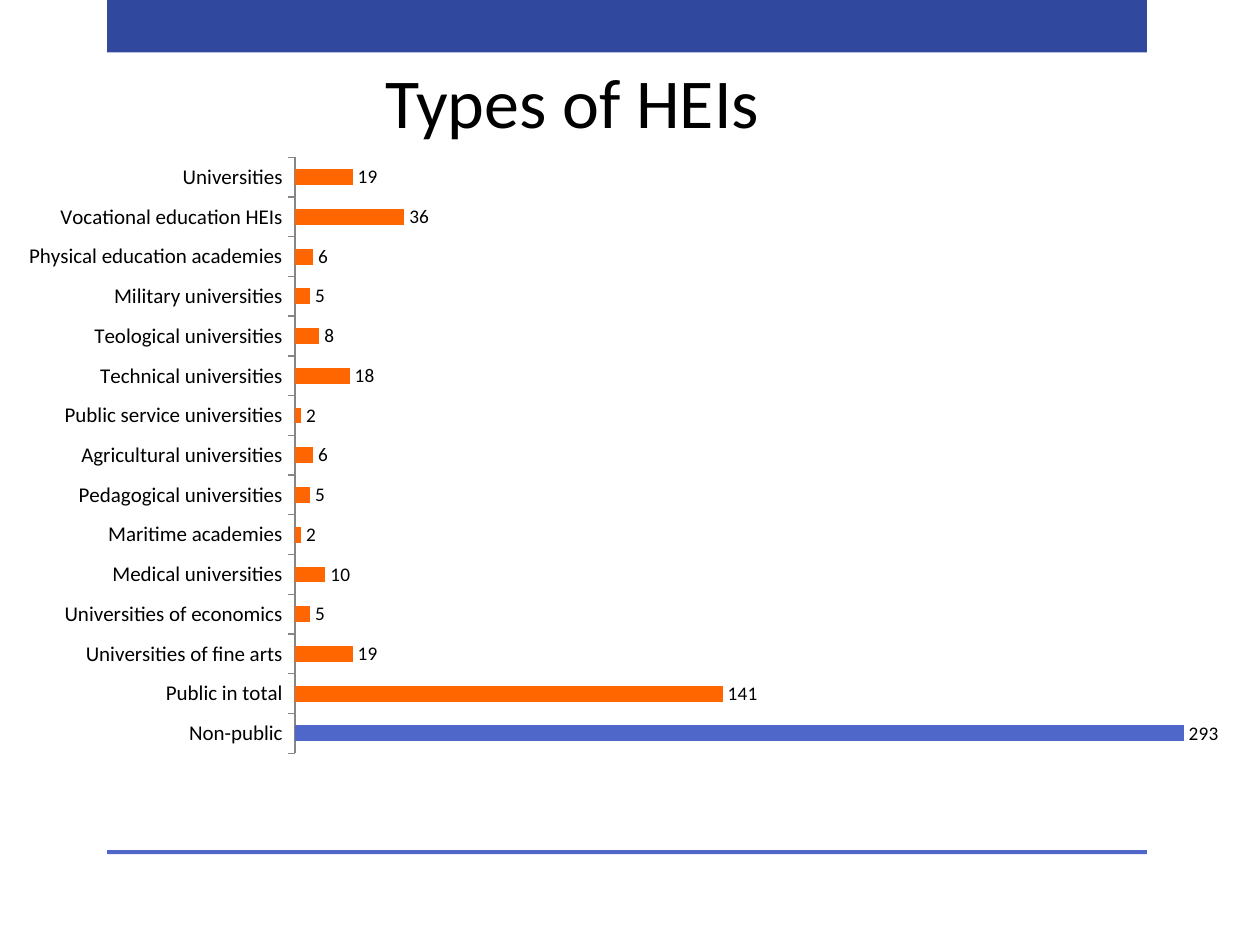
import pptx
import pptx.chart.data
import pptx.dml.color
import pptx.enum.chart
import pptx.enum.shapes
import pptx.enum.text
import pptx.oxml
import pptx.util

Cm = pptx.util.Cm
Pt = pptx.util.Pt
RGBColor = pptx.dml.color.RGBColor

NAVY = RGBColor(0x31, 0x48, 0x9F)
BLUE = RGBColor(0x4E, 0x67, 0xC8)
ORANGE = RGBColor(0xFF, 0x66, 0x00)
BLACK = RGBColor(0, 0, 0)
GREY = RGBColor(0x86, 0x86, 0x86)

INSTITUTIONS = {
    "Non-public": 293,
    "Public in total": 141,
    "Universities of fine arts": 19,
    "Universities of economics": 5,
    "Medical universities": 10,
    "Maritime academies": 2,
    "Pedagogical universities": 5,
    "Agricultural universities": 6,
    "Public service universities": 2,
    "Technical universities": 18,
    "Teological universities": 8,
    "Military universities": 5,
    "Physical education academies": 6,
    "Vocational education HEIs": 36,
    "Universities": 19,
}

PLOT_LAYOUT = (
    '<c:layout xmlns:c="http://schemas.openxmlformats.org/drawingml/2006/chart">'
    '<c:manualLayout><c:layoutTarget val="inner"/>'
    '<c:xMode val="edge"/><c:yMode val="edge"/>'
    '<c:x val="0.24"/><c:y val="0.02"/><c:w val="0.74"/><c:h val="0.96"/>'
    '</c:manualLayout></c:layout>'
)


class SlideBuilder:
    font_name = "Calibri"

    def __init__(self, slide):
        self.slide = slide

    def style_font(self, font, size):
        font.name = self.font_name
        font.size = Pt(size)
        font.color.rgb = BLACK

    def band(self, left, top, width, height, color):
        shape = self.slide.shapes.add_shape(
            pptx.enum.shapes.MSO_SHAPE.RECTANGLE,
            Cm(left), Cm(top), Cm(width), Cm(height))
        shape.shadow.inherit = False
        shape.fill.solid()
        shape.fill.fore_color.rgb = color
        shape.line.fill.background()

    def title(self, left, top, width, height, text):
        shape = self.slide.shapes.add_textbox(
            Cm(left), Cm(top), Cm(width), Cm(height))
        frame = shape.text_frame
        frame.word_wrap = True
        frame.vertical_anchor = pptx.enum.text.MSO_ANCHOR.BOTTOM
        frame.margin_bottom = Cm(0.05)
        paragraph = frame.paragraphs[0]
        paragraph.alignment = pptx.enum.text.PP_ALIGN.CENTER
        run = paragraph.add_run()
        run.text = text
        self.style_font(run.font, 40)

    def bar_chart(self, left, top, width, height, values, highlight):
        data = pptx.chart.data.CategoryChartData()
        data.categories = list(values)
        data.add_series("Series 1", list(values.values()))
        chart = self.slide.shapes.add_chart(
            pptx.enum.chart.XL_CHART_TYPE.BAR_CLUSTERED,
            Cm(left), Cm(top), Cm(width), Cm(height), data).chart
        chart.has_legend = False
        chart.has_title = False
        self.style_font(chart.font, 10)

        category_axis = chart.category_axis
        category_axis.has_major_gridlines = False
        category_axis.major_tick_mark = pptx.enum.chart.XL_TICK_MARK.OUTSIDE
        category_axis.format.line.color.rgb = GREY
        category_axis.format.line.width = Pt(0.75)
        self.style_font(category_axis.tick_labels.font, 12)

        value_axis = chart.value_axis
        value_axis.has_major_gridlines = False
        value_axis.minimum_scale = 0
        value_axis.maximum_scale = 300
        value_axis.visible = False

        plot = chart.plots[0]
        plot.gap_width = 150
        plot.vary_by_categories = False
        series = plot.series[0]
        self.fill_bar(series, ORANGE)
        self.fill_bar(series.points[list(values).index(highlight)], BLUE)
        labels = series.data_labels
        labels.show_value = True
        labels.position = pptx.enum.chart.XL_LABEL_POSITION.OUTSIDE_END
        self.style_font(labels.font, 11)

        plot_area = chart.element.find(".//{*}plotArea")
        for layout in plot_area.findall("{*}layout"):
            plot_area.remove(layout)
        plot_area.insert(0, pptx.oxml.parse_xml(PLOT_LAYOUT))

    def fill_bar(self, bar, color):
        bar.format.fill.solid()
        bar.format.fill.fore_color.rgb = color


def main():
    presentation = pptx.Presentation()
    presentation.slide_width = Cm(25.4)
    presentation.slide_height = Cm(19.05)
    builder = SlideBuilder(
        presentation.slides.add_slide(presentation.slide_layouts[6]))
    builder.band(2.16, 0, 20.96, 1.06, NAVY)
    builder.band(2.16, 17.14, 20.96, 0.08, BLUE)
    builder.title(2.11, 0.33, 18.85, 2.59, "Types of HEIs")
    builder.bar_chart(0, 2.92, 24.79, 12.52, INSTITUTIONS, "Non-public")
    presentation.save("out.pptx")


if __name__ == "__main__":
    main()
